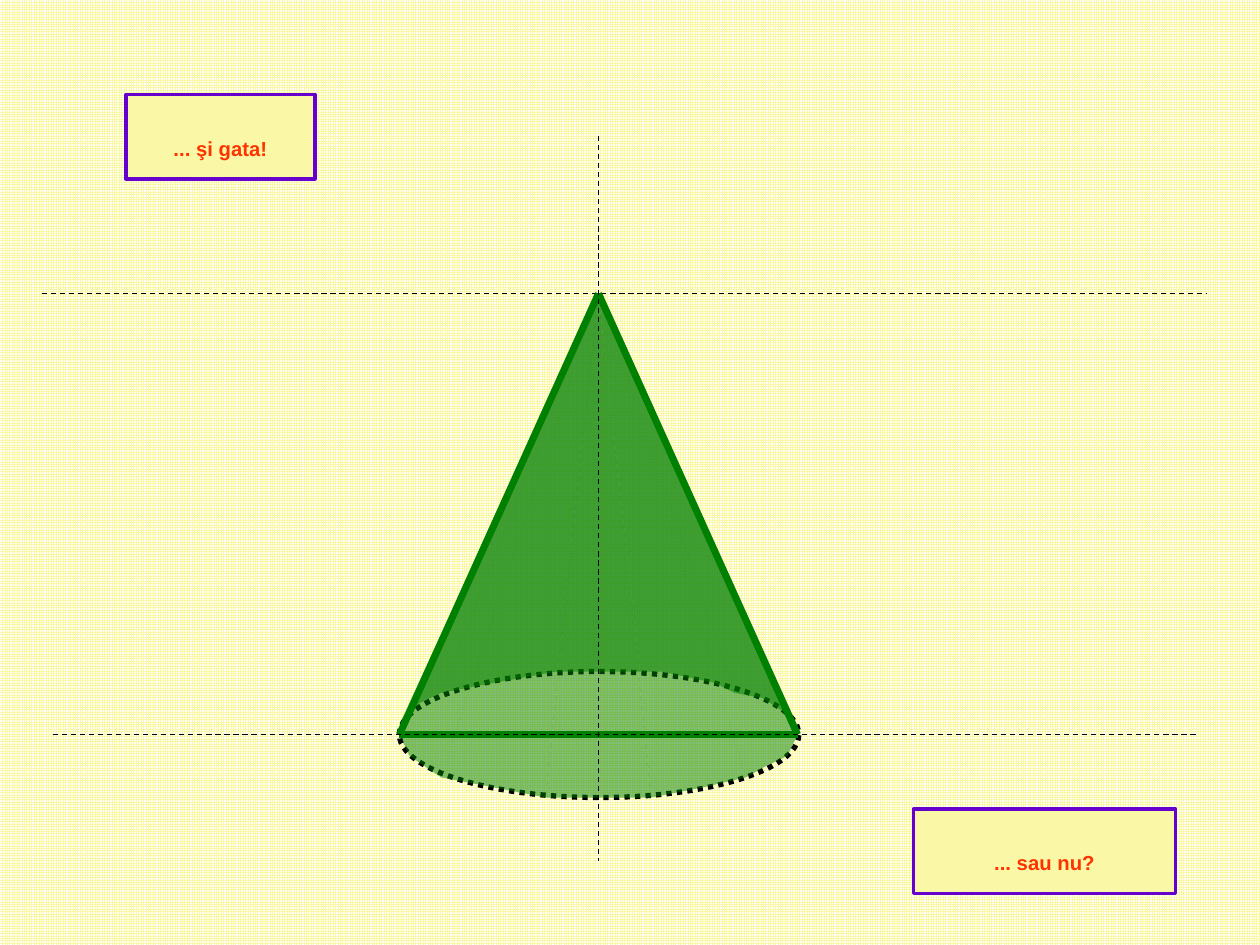
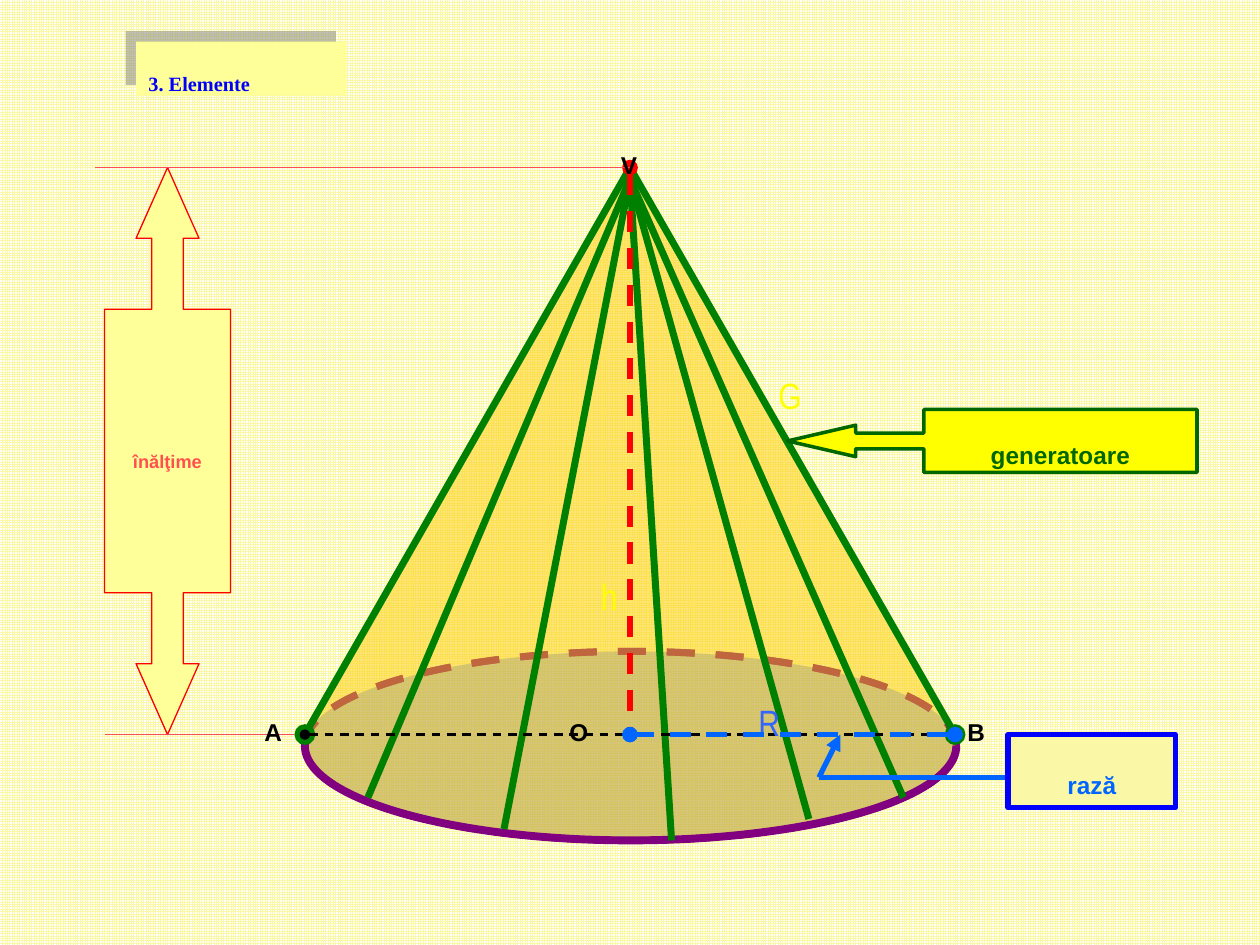
from lxml.etree import SubElement
from pptx import Presentation
from pptx.dml.color import RGBColor
from pptx.enum.dml import MSO_LINE as Dash, MSO_PATTERN as Pattern
from pptx.enum.shapes import MSO_CONNECTOR as Connector, MSO_SHAPE as Preset
from pptx.enum.text import MSO_ANCHOR as Anchor, PP_ALIGN as Align
from pptx.oxml.ns import qn
from pptx.util import Inches, Pt

COLORS = {
    "cream": "FAF8A6", "white": "FFFFFF", "black": "000000", "green": "008000",
    "dark_green": "006600", "violet": "6600CC", "orange_red": "FF3300",
    "pale": "FFFF99", "gray": "808080", "blue": "0000FF", "sky": "0066FF",
    "soft_blue": "3366FF", "purple": "800080", "gold": "FFCC00",
    "red": "FF0000", "coral": "FF5050", "yellow": "FFFF00",
}

# Slide 1: cone built from translucent facets that meet at the apex
APEX = (4.75, 2.33)
BASE_LEFT, BASE_RIGHT = (3.17, 5.83), (6.33, 5.83)
BASE_OVAL = (3.17, 5.33, 3.17, 1)
INNER_FACETS = [
    [(5.83, 5.5), (5.67, 5.42), (5.25, 5.33), (5.08, 5.33)],
    [(5.83, 5.5), (6.05, 5.54), (6.25, 5.67), (6.33, 5.83)],
    [(6.33, 5.83), (6.25, 6), (6.08, 6.08), (5.92, 6.17)],
    [(5.08, 5.33), (4.75, 5.33), (4.42, 5.33)],
    [(4.33, 6.33), (5.17, 6.33)],
]
OUTER_FACETS = [
    [(4.42, 5.33), (3.92, 5.42), (3.5, 5.5)],
    [(3.5, 5.5), (3.33, 5.58), (3.17, 5.75)],
    [(3.17, 5.83), (3.25, 6), (3.5, 6.17)],
    [(3.5, 6.17), (3.92, 6.25), (4.33, 6.33)],
    [(5.92, 6.17), (5.58, 6.25), (5.17, 6.33)],
]
NOTES = [
    ("... şi gata!", (1, 0.75, 1.5, 0.67)),
    ("... sau nu?", (7.25, 6.42, 2.08, 0.67)),
]

# Slide 2: the named parts of the cone
TOP, CENTER = (5, 1.33), (5, 5.83)
POINT_A, POINT_B = (2.42, 5.83), (7.58, 5.83)
CIRCLE = (2.42, 5.17, 5.17, 1.5)
MANTLE_RIM = [
    (2.42, 5.83), (2.42, 6), (2.67, 6.25), (3.17, 6.42), (3.83, 6.58),
    (4.67, 6.67), (5.42, 6.67), (6.17, 6.58), (6.92, 6.42), (7.33, 6.25),
    (7.5, 6.08), (7.58, 5.92), (7.5, 5.75),
]
GENERATOR_FEET = [(2.92, 6.33), (4, 6.58), (5.33, 6.67), (6.42, 6.5), (7.17, 6.33)]
POINT_LABELS = [("A", 2, 5.42), ("B", 7.58, 5.42), ("O", 4.42, 5.42), ("V", 4.83, 0.92)]
# letter, place, colour, opacity, outline width
RADIUS_LETTER = ("R", (5.92, 5.17, 0.27, 0.62), "soft_blue", None, 1.5)
HEIGHT_LETTER = ("h", (4.67, 4.17, 0.26, 0.62), "red", 81, 2)
SLANT_LETTER = ("G", (6.08, 2.58, 0.25, 0.57), "green", 74, 1)


def rgb(name):
    return RGBColor.from_string(COLORS[name])


def inches(values):
    return [Inches(value) for value in values]


def set_alpha(solid_fill, percent):
    SubElement(solid_fill[0], qn("a:alpha"), val=str(percent * 1000))


def paint(shape, fill=None, line=None, width=1, dash=None, alpha=None):
    shape.shadow.inherit = False
    if fill:
        shape.fill.solid()
        shape.fill.fore_color.rgb = rgb(fill)
        if alpha:
            set_alpha(shape.element.spPr.find(qn("a:solidFill")), alpha)
    else:
        shape.fill.background()
    if line:
        shape.line.color.rgb = rgb(line)
        shape.line.width = Pt(width)
        if dash:
            shape.line.dash_style = dash
    else:
        shape.line.fill.background()
    return shape


def add_preset(page, preset, place, adjust=(), **look):
    shape = page.shapes.add_shape(preset, *inches(place))
    for index, value in enumerate(adjust):
        shape.adjustments[index] = value
    return paint(shape, **look)


def add_facet(page, apex, rim, fill):
    builder = page.shapes.build_freeform(*inches(apex))
    builder.add_line_segments([inches(point) for point in rim], close=True)
    return paint(builder.convert_to_shape(), fill=fill, alpha=50)


def add_line(page, start, end, color, width, dash=None, head=None, tail=None):
    line = page.shapes.add_connector(Connector.STRAIGHT, *inches(start + end))
    line.line.color.rgb = rgb(color)
    line.line.width = Pt(width)
    if dash:
        line.line.dash_style = dash
    outline = line.line._get_or_add_ln()
    for tag, kind in (("a:headEnd", head), ("a:tailEnd", tail)):
        if kind:
            SubElement(outline, qn(tag), type=kind)
    SubElement(line.element.spPr, qn("a:effectLst"))


def write(box, text, size, color, font="Arial", bold=True, align=Align.CENTER,
          anchor=Anchor.MIDDLE, wrap=False):
    """All text in the deck is set as subscript."""
    frame = box.text_frame
    frame.text = text
    frame.word_wrap = wrap
    frame.vertical_anchor = anchor
    para = frame.paragraphs[0]
    para.alignment = align
    span = para.runs[0]
    span.font.size = Pt(size)
    span.font.name = font
    span.font.bold = bold
    span.font.color.rgb = rgb(color)
    properties = span._r.get_or_add_rPr()
    properties.set("baseline", "-25000")
    return properties


def add_outlined_letter(page, letter, place, color, alpha, width):
    box = page.shapes.add_textbox(*inches(place))
    properties = write(box, letter, 36, color, "Arial Narrow", False, anchor=Anchor.TOP)
    if alpha:
        set_alpha(properties.find(qn("a:solidFill")), alpha)
    outline = SubElement(properties, qn("a:ln"), w=str(Pt(width)))
    SubElement(SubElement(outline, qn("a:solidFill")), qn("a:srgbClr"), val=COLORS["yellow"])
    properties.insert(0, outline)


def add_page(deck):
    page = deck.slides.add_slide(deck.slide_layouts[6])
    fill = page.background.fill
    fill.patterned()
    fill.pattern = Pattern.SMALL_GRID
    fill.fore_color.rgb = rgb("cream")
    fill.back_color.rgb = rgb("white")
    return page


def build_cone(deck):
    page = add_page(deck)
    axis = ("black", 0.75, Dash.DASH)
    add_preset(page, Preset.OVAL, BASE_OVAL, line="black", width=3, dash=Dash.ROUND_DOT)
    add_line(page, (0.33, 2.33), (9.58, 2.33), *axis)

    # Facets and edges
    for rim in INNER_FACETS:
        add_facet(page, APEX, rim, "green")
    for start, end in ((APEX, BASE_RIGHT), (BASE_LEFT, BASE_RIGHT), (APEX, BASE_LEFT)):
        add_line(page, start, end, "green", 4)
    for rim in OUTER_FACETS:
        add_facet(page, APEX, rim, "green")

    # Axes and notes
    add_line(page, (4.75, 1.08), (4.75, 6.83), *axis)
    add_line(page, (0.42, 5.83), (9.5, 5.83), *axis)
    for text, place in NOTES:
        box = add_preset(page, Preset.RECTANGLE, place, fill="cream", line="violet", width=2)
        write(box, text, 20, "orange_red")


def add_title(page, text):
    box = add_preset(page, Preset.RECTANGLE, (1.08, 0.33, 1.67, 0.43), fill="pale")
    write(box, text, 20, "blue", "Times New Roman", align=Align.LEFT,
          anchor=Anchor.TOP, wrap=True)
    effects = box.element.spPr.find(qn("a:effectLst"))
    shadow = SubElement(effects, qn("a:outerShdw"), dist=str(Pt(8.5)),
                        dir=str(225 * 60000), algn="ctr", rotWithShape="0")
    SubElement(shadow, qn("a:srgbClr"), val=COLORS["gray"])
    set_alpha(shadow, 50)


def build_elements(deck):
    page = add_page(deck)
    add_title(page, "3. Elemente")

    # Base circle, mantle and the visible front of the rim
    rim_line = dict(line="purple", width=4)
    add_preset(page, Preset.OVAL, CIRCLE, dash=Dash.DASH, **rim_line)
    add_preset(page, Preset.OVAL, CIRCLE, fill="soft_blue", alpha=40, dash=Dash.DASH, **rim_line)
    add_facet(page, TOP, MANTLE_RIM, "gold")
    # Arc adjustments are angles in units of 5/3 degree
    add_preset(page, Preset.ARC, CIRCLE, adjust=(-1 * 0.6, 181 * 0.6), line="purple", width=4.5)

    # Generators
    add_line(page, TOP, POINT_B, "green", 4, tail="oval")
    for foot in GENERATOR_FEET:
        add_line(page, (5, 1.42), foot, "green", 4)
    add_line(page, TOP, POINT_A, "green", 4, tail="oval")
    callout = add_preset(page, Preset.LEFT_ARROW_CALLOUT, (6.25, 3.25, 3.25, 0.5),
                         (0.25, 0.25, 1.083, 0.667), fill="yellow", line="dark_green", width=2)
    write(callout, "generatoare", 24, "dark_green")

    # Diameter and height
    add_line(page, POINT_A, POINT_B, "black", 1.25, Dash.DASH, "oval", "oval")
    add_line(page, TOP, CENTER, "red", 3, Dash.DASH, "oval")
    add_outlined_letter(page, *RADIUS_LETTER)
    add_outlined_letter(page, *HEIGHT_LETTER)
    callout = add_preset(page, Preset.UP_DOWN_ARROW_CALLOUT, (0.83, 1.33, 1, 4.5),
                         (0.25, 0.25, 0.562, 0.5), fill="pale", line="red", width=0.75)
    write(callout, "înălţime", 18, "coral")
    add_outlined_letter(page, *SLANT_LETTER)

    # Radius
    add_line(page, POINT_B, CENTER, "sky", 3, Dash.DASH, "oval", "oval")
    add_line(page, TOP, (0.75, 1.33), "coral", 0.75)
    add_line(page, (2.33, 5.83), (0.83, 5.83), "coral", 0.75)
    add_line(page, (6.5, 6.17), (6.67, 5.83), "sky", 3, tail="triangle")
    add_line(page, (6.5, 6.17), (8.08, 6.17), "sky", 3)
    box = add_preset(page, Preset.RECTANGLE, (8, 5.83, 1.33, 0.58),
                     fill="cream", line="blue", width=3)
    write(box, "rază", 24, "sky")

    # Point names
    for name, left, top in POINT_LABELS:
        box = page.shapes.add_textbox(*inches((left, top, 0.58, 0.5)))
        write(box, name, 24, "black", align=Align.LEFT, anchor=Anchor.TOP, wrap=True)


def main():
    deck = Presentation()
    deck.slide_width, deck.slide_height = Inches(10), Inches(7.5)
    build_cone(deck)
    build_elements(deck)
    deck.save("out.pptx")


if __name__ == "__main__":
    main()
